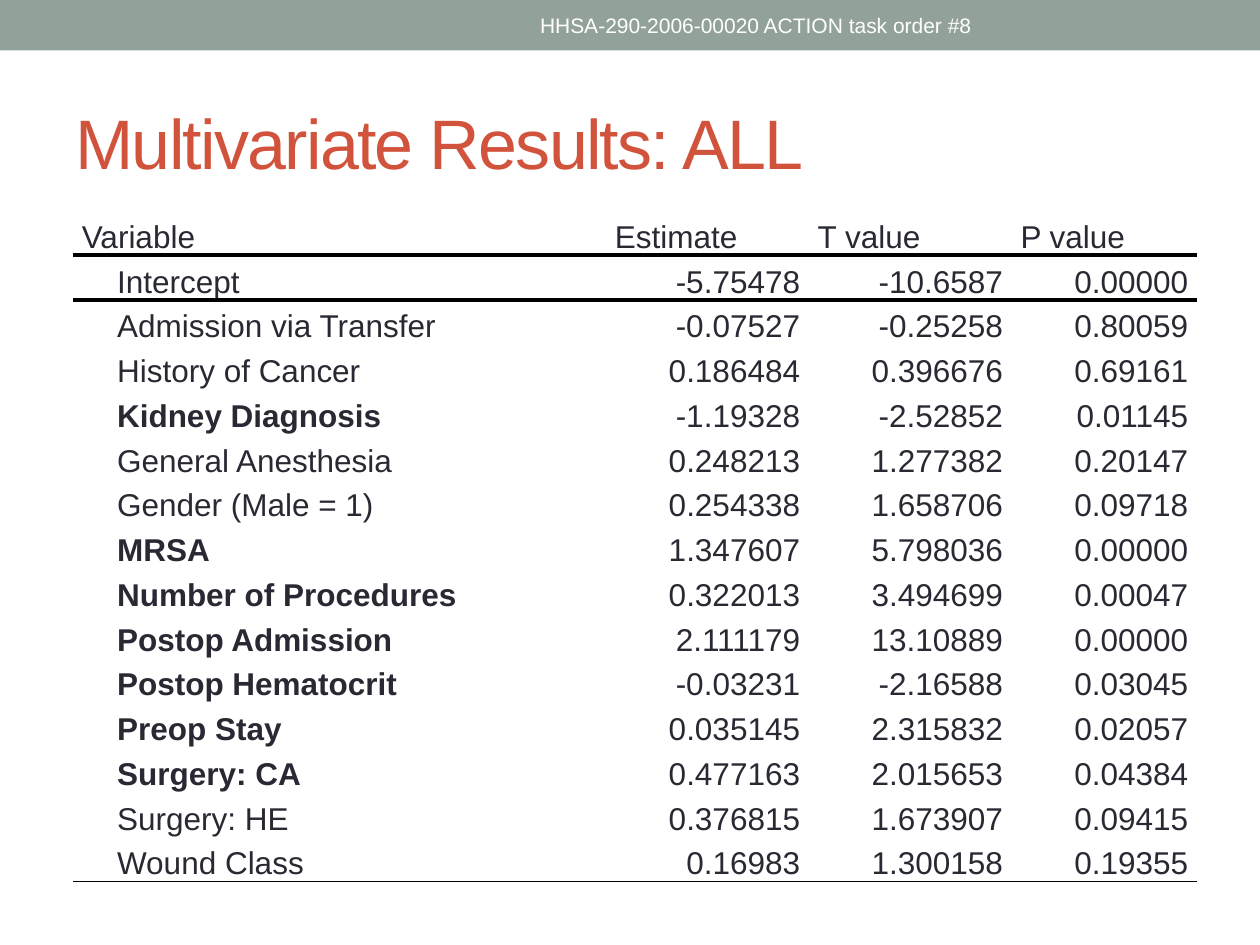
from lxml import etree
from pptx import Presentation
from pptx.dml.color import RGBColor
from pptx.enum.shapes import MSO_SHAPE
from pptx.enum.text import MSO_ANCHOR, PP_ALIGN
from pptx.oxml.ns import qn
from pptx.util import Emu, Inches, Pt

RECT = MSO_SHAPE.RECTANGLE
MIDDLE, BOTTOM = MSO_ANCHOR.MIDDLE, MSO_ANCHOR.BOTTOM
LEFT, CENTER, RIGHT = PP_ALIGN.LEFT, PP_ALIGN.CENTER, PP_ALIGN.RIGHT

WIDE, HIGH = Inches(10), Inches(7.5)
FONT = "Arial"
PLAIN = "{2D5ABB26-0587-4C30-8999-92F81FD0307C}"
COLORS = {
    "band": "93A299",
    "title": "D2533C",
    "body": "292934",
    "rule": "000000",
    "white": "FFFFFF",
}
COLS = [4.23, 1.61, 1.61, 1.47]
HEAD = ["Variable", "Estimate", "T value", "P value"]
ROWS = [
    ["Intercept", "-5.75478", "-10.6587", "0.00000"],
    ["Admission via Transfer", "-0.07527", "-0.25258", "0.80059"],
    ["History of Cancer", "0.186484", "0.396676", "0.69161"],
    ["Kidney Diagnosis", "-1.19328", "-2.52852", "0.01145"],
    ["General Anesthesia", "0.248213", "1.277382", "0.20147"],
    ["Gender (Male = 1)", "0.254338", "1.658706", "0.09718"],
    ["MRSA", "1.347607", "5.798036", "0.00000"],
    ["Number of Procedures", "0.322013", "3.494699", "0.00047"],
    ["Postop Admission", "2.111179", "13.10889", "0.00000"],
    ["Postop Hematocrit", "-0.03231", "-2.16588", "0.03045"],
    ["Preop Stay", "0.035145", "2.315832", "0.02057"],
    ["Surgery: CA", "0.477163", "2.015653", "0.04384"],
    ["Surgery: HE", "0.376815", "1.673907", "0.09415"],
    ["Wound Class", "0.16983", "1.300158", "0.19355"],
]
STRONG = {
    "Kidney Diagnosis", "MRSA", "Number of Procedures", "Postop Admission",
    "Postop Hematocrit", "Preop Stay", "Surgery: CA",
}


def paint(name):
    return RGBColor.from_string(COLORS[name])


def write(frame, text, size, color, align=LEFT, bold=False):
    para = frame.paragraphs[0]
    run = para.add_run()
    run.text = text
    para.alignment = align
    font = para.font
    font.name, font.size, font.bold = FONT, Pt(size), bold
    font.color.rgb = paint(color)
    return para


def add_band(slide, share):
    band = slide.shapes.add_shape(RECT, 0, 0, WIDE, int(HIGH * share))
    band.shadow.inherit = False
    band.fill.solid()
    band.fill.fore_color.rgb = paint("band")
    band.line.fill.background()


def add_label(slide, box, text, size, color, align=LEFT, space=0):
    x, y, w, h = box
    label = slide.shapes.add_textbox(
        int(WIDE * x), int(HIGH * y), int(WIDE * w), int(HIGH * h))
    frame = label.text_frame
    frame.word_wrap = True
    frame.vertical_anchor = MIDDLE
    para = write(frame, text, size, color, align)
    if space:
        para.runs[0].font._element.set("spc", str(space * 100))


def add_rule(cell, side, width):
    line = etree.Element(qn("a:" + side), w=str(Pt(width)))
    fill = etree.SubElement(line, qn("a:solidFill"))
    etree.SubElement(fill, qn("a:srgbClr"), val=COLORS["rule"])
    cell._tc.get_or_add_tcPr().insert(0, line)


def fill_cell(cell, text, row, col):
    cell.fill.background()
    cell.vertical_anchor = BOTTOM
    cell.margin_left = cell.margin_right = Inches(0.07)
    cell.margin_top = cell.margin_bottom = 0
    align = RIGHT if row and col else LEFT
    para = write(cell.text_frame, text, 18, "body", align, text in STRONG)
    para.line_spacing = 1.15
    if row and not col:
        para._p.get_or_add_pPr().set("indent", str(Inches(0.28)))


def add_grid(slide, x, y, high):
    data = [HEAD] + ROWS
    frame = slide.shapes.add_table(
        len(data), len(COLS), int(WIDE * x), int(HIGH * y),
        Inches(sum(COLS)), Inches(high))
    table = frame.table
    table.first_row = table.horz_banding = False
    table._tbl.tblPr.find(qn("a:tableStyleId")).text = PLAIN
    for col, width in zip(table.columns, COLS):
        col.width = Inches(width)
    for row in table.rows:
        row.height = Emu(Inches(high) // len(data))
    rules = {0: ("lnB", 2.25), 1: ("lnT", 2.25), len(ROWS): ("lnB", 1)}
    for r, line in enumerate(data):
        for c, text in enumerate(line):
            cell = table.cell(r, c)
            fill_cell(cell, text, r, c)
            if r in rules:
                add_rule(cell, *rules[r])


def main():
    deck = Presentation()
    deck.slide_width, deck.slide_height = WIDE, HIGH
    slide = deck.slides.add_slide(deck.slide_layouts[6])
    slide.background.fill.solid()
    slide.background.fill.fore_color.rgb = paint("white")
    add_band(slide, 0.4 / 7.5)
    add_label(slide, (0.05, 0.58 / 7.5, 0.9, 1.08 / 7.5),
              "Multivariate Results: ALL", 40, "title", space=-1)
    add_grid(slide, 0.058, 1.67 / 7.5, 5.33)
    add_label(slide, (0.375, 0.02 / 7.5, 0.45, 0.36 / 7.5),
              "HHSA-290-2006-00020 ACTION task order #8", 12, "white", CENTER)
    deck.save("out.pptx")


if __name__ == "__main__":
    main()
